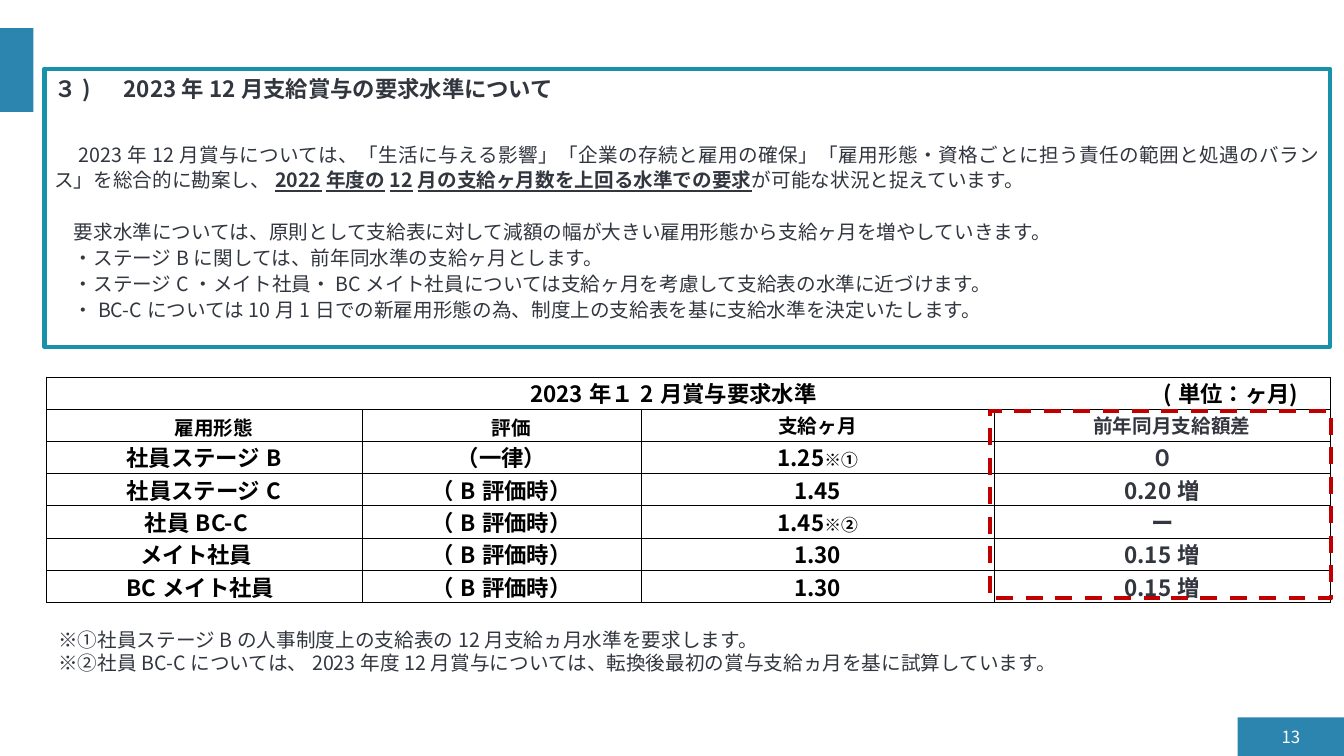
from lxml import etree
from pptx import Presentation
from pptx import util as u
from pptx.dml.color import RGBColor
from pptx.enum import dml, lang, shapes, text
from pptx.oxml import ns

WHITE = RGBColor(0xFF, 0xFF, 0xFF)
BLACK = RGBColor(0x00, 0x00, 0x00)
INK = RGBColor(0x32, 0x36, 0x3F)
BLUE = RGBColor(0x2C, 0x85, 0xAE)
TEAL = RGBColor(0x18, 0x91, 0xAB)
RED = RGBColor(0xC0, 0x00, 0x00)

LEFT, CENTER, RIGHT, JUSTIFY = (text.PP_ALIGN.LEFT, text.PP_ALIGN.CENTER,
                                text.PP_ALIGN.RIGHT, text.PP_ALIGN.JUSTIFY)
TOP, MIDDLE, BOTTOM = (text.MSO_ANCHOR.TOP, text.MSO_ANCHOR.MIDDLE,
                       text.MSO_ANCHOR.BOTTOM)
EM = 0.49  # one 14 pt character, in cm


def child(parent, tag, **attributes):
    return etree.SubElement(parent, ns.qn(tag), attributes)


class SlideBuilder:
    FONT = "Noto Sans CJK JP"

    def __init__(self, slide):
        self.slide = slide

    def run(self, paragraph, words, size, color, bold=False, underline=False):
        run = paragraph.add_run()
        run.text = words
        font = run.font
        font.name, font.size = self.FONT, u.Pt(size)
        font.bold, font.underline = bold, underline
        font.color.rgb = color
        font.language_id = lang.MSO_LANGUAGE_ID.JAPANESE
        child(font._element, "a:ea", typeface=self.FONT)

    def indent(self, paragraph, left, first=0.0):
        props = paragraph._p.get_or_add_pPr()
        props.set("marL", str(u.Cm(left)))
        props.set("indent", str(u.Cm(first)))

    def tabs(self, paragraph, *stops):
        tab_list = child(paragraph._p.get_or_add_pPr(), "a:tabLst")
        for position, kind in stops:
            child(tab_list, "a:tab", pos=str(u.Cm(position)), algn=kind)

    def frame(self, shape, anchor):
        frame = shape.text_frame
        frame.word_wrap = True
        frame.auto_size = text.MSO_AUTO_SIZE.NONE
        frame.vertical_anchor = anchor
        return frame

    def title(self, box, words):
        title = self.slide.shapes.title
        title.left, title.top, title.width, title.height = map(u.Cm, box)
        paragraph = self.frame(title, MIDDLE).paragraphs[0]
        paragraph.alignment = LEFT
        self.run(paragraph, words, 16, INK, bold=True)
        # Bring the heading in front of the panel
        title.element.getparent().append(title.element)

    def rect(self, box, fill=None, line=None, dash=None):
        shape = self.slide.shapes.add_shape(shapes.MSO_SHAPE.RECTANGLE,
                                            *map(u.Cm, box))
        shape.shadow.inherit = False
        if fill is None:
            shape.fill.background()
        else:
            shape.fill.solid()
            shape.fill.fore_color.rgb = fill
        if line is None:
            shape.line.fill.background()
        else:
            shape.line.color.rgb = line
            shape.line.width = u.Pt(3)
            if dash:
                shape.line.dash_style = dash
        return shape

    def textbox(self, box):
        return self.frame(self.slide.shapes.add_textbox(*map(u.Cm, box)), MIDDLE)

    def table(self, box, widths, row_count):
        table = self.slide.shapes.add_table(row_count, len(widths),
                                            *map(u.Cm, box)).table
        table.first_row = table.horz_banding = False
        for column, width in zip(table.columns, widths):
            column.width = u.Cm(width)
        for row in table.rows:
            row.height = u.Cm(box[3] / row_count)
        for cell in table.iter_cells():
            cell.margin_left = cell.margin_right = 0
            cell.margin_top = cell.margin_bottom = 0
            cell.vertical_anchor = MIDDLE
            self.border(cell)
            cell.fill.background()
        return table

    def border(self, cell):
        props = cell._tc.get_or_add_tcPr()
        for side in ("a:lnL", "a:lnR", "a:lnT", "a:lnB"):
            line = child(props, side, w=str(u.Pt(0.5)))
            child(child(line, "a:solidFill"), "a:srgbClr", val=str(BLACK))

    def cell(self, cell, runs, color, left=0.0, right=0.0):
        cell.margin_left, cell.margin_right = u.Cm(left), u.Cm(right)
        paragraph = cell.text_frame.paragraphs[0]
        paragraph.alignment = CENTER
        for words, size in runs:
            self.run(paragraph, words, size, color, bold=True)


PLAN = [  # paragraphs: runs (words, emphasised), first-line indent, gap above
    ([("2023年12月賞与については、「生活に与える影響」「企業の存続と雇用の確保」"
       "「雇用形態・資格ごとに担う責任の範囲と処遇のバランス」を総合的に勘案し、", False),
      ("2022年度の12月の支給ヶ月数を上回る水準での要求", True),
      ("が可能な状況と捉えています。", False)], 0.62, 0),
    ([("要求水準については、原則として支給表に対して減額の幅が大きい雇用形態から"
       "支給ヶ月を増やしていきます。", False)], EM, 18.5),
] + [([(words, False)], EM, 0) for words in (
    "・ステージBに関しては、前年同水準の支給ヶ月とします。",
    "・ステージC・メイト社員・BCメイト社員については支給ヶ月を考慮して支給表の水準に近づけます。",
    "・BC-Cについては10月1日での新雇用形態の為、制度上の支給表を基に支給水準を決定いたします。")]

HEADERS = [("雇用形態", EM, BOTTOM), ("評価", EM, BOTTOM),
           ("支給ヶ月", 0, MIDDLE), ("前年同月支給額差", EM, MIDDLE)]
LEVELS = [  # employment type, its right inset, rating, months, note, difference
    ("社員ステージB", 0, "（一律）", "1.25", "※➀", "０"),
    ("社員ステージC", 0, "（B評価時）", "1.45", "", "0.20増"),
    ("社員BC-C", 0.4, "（B評価時）", "1.45", "※➁", "ー"),
    ("メイト社員", 0.4, "（B評価時）", "1.30", "", "0.15増"),
    ("BCメイト社員", 0.2, "（B評価時）", "1.30", "", "0.15増"),
]
NOTES = ["※➀社員ステージBの人事制度上の支給表の12月支給ヵ月水準を要求します。",
         "※➁社員BC-Cについては、2023年度12月賞与については、"
         "転換後最初の賞与支給ヵ月を基に試算しています。"]


def main():
    deck = Presentation()
    deck.slide_width, deck.slide_height = u.Cm(33.87), u.Cm(19.05)
    page = SlideBuilder(deck.slides.add_slide(deck.slide_layouts[5]))

    # Page frame and number
    page.rect((31.19, 18.08, 2.68, 0.97), BLUE)
    page.rect((0, 0.71, 0.84, 2.11), BLUE)
    number = page.textbox((31.5, 18.29, 1.52, 0.56)).paragraphs[0]
    number.alignment = RIGHT
    page.run(number, "13", 12, WHITE)

    # Panel with heading and reasoning
    panel = page.rect((1.12, 1.73, 32.39, 7.01), WHITE, TEAL)
    reasoning = page.frame(panel, TOP)
    reasoning.margin_top = u.Cm(1.8)
    for index, (runs, first, gap) in enumerate(PLAN):
        paragraph = reasoning.add_paragraph() if index else reasoning.paragraphs[0]
        paragraph.alignment = JUSTIFY
        paragraph.line_spacing = u.Pt(18.5)
        paragraph.space_before = u.Pt(gap)
        page.indent(paragraph, 0, first)
        for words, strong in runs:
            page.run(paragraph, words, 14, INK, strong, strong)
    page.title((1.12, 1.73, 32.39, 1), "３)　2023年12月支給賞与の要求水準について")

    # Table of requested levels
    levels = page.table((1.17, 9.5, 32.36, 5.6), (7.95, 7.04, 8.89, 8.48),
                        len(LEVELS) + 2)
    levels.cell(0, 0).merge(levels.cell(0, 3))
    caption = levels.cell(0, 0).text_frame.paragraphs[0]
    caption.alignment = LEFT
    page.tabs(caption, (15.8, "ctr"), (31.55, "r"))
    page.run(caption, "\t2023年１2月賞与要求水準\t(単位：ヶ月)", 16, BLACK, bold=True)
    for column, (words, inset, anchor) in enumerate(HEADERS):
        header = levels.cell(1, column)
        header.vertical_anchor = anchor
        page.cell(header, [(words, 14)], INK if column == 3 else BLACK, left=inset)
    for row, (kind, inset, rating, months, note, change) in enumerate(LEVELS, 2):
        page.cell(levels.cell(row, 0), [(kind, 16)], BLACK, right=inset)
        page.cell(levels.cell(row, 1), [(rating, 16)], BLACK)
        page.cell(levels.cell(row, 2),
                  [(months, 16)] + ([(note, 12)] if note else []), BLACK)
        page.cell(levels.cell(row, 3), [(change, 16)], INK)

    # Footnotes
    footnotes = page.textbox((0.48, 15.7, 31.04, 1.45))
    for index, words in enumerate(NOTES):
        paragraph = footnotes.add_paragraph() if index else footnotes.paragraphs[0]
        paragraph.line_spacing = u.Pt(16.5)
        page.indent(paragraph, 0.74)
        page.run(paragraph, words, 14, INK)

    # Highlight on the year-on-year column
    page.rect((24.94, 10.36, 8.61, 4.72), line=RED, dash=dml.MSO_LINE.DASH)

    deck.save("out.pptx")


if __name__ == "__main__":
    main()
